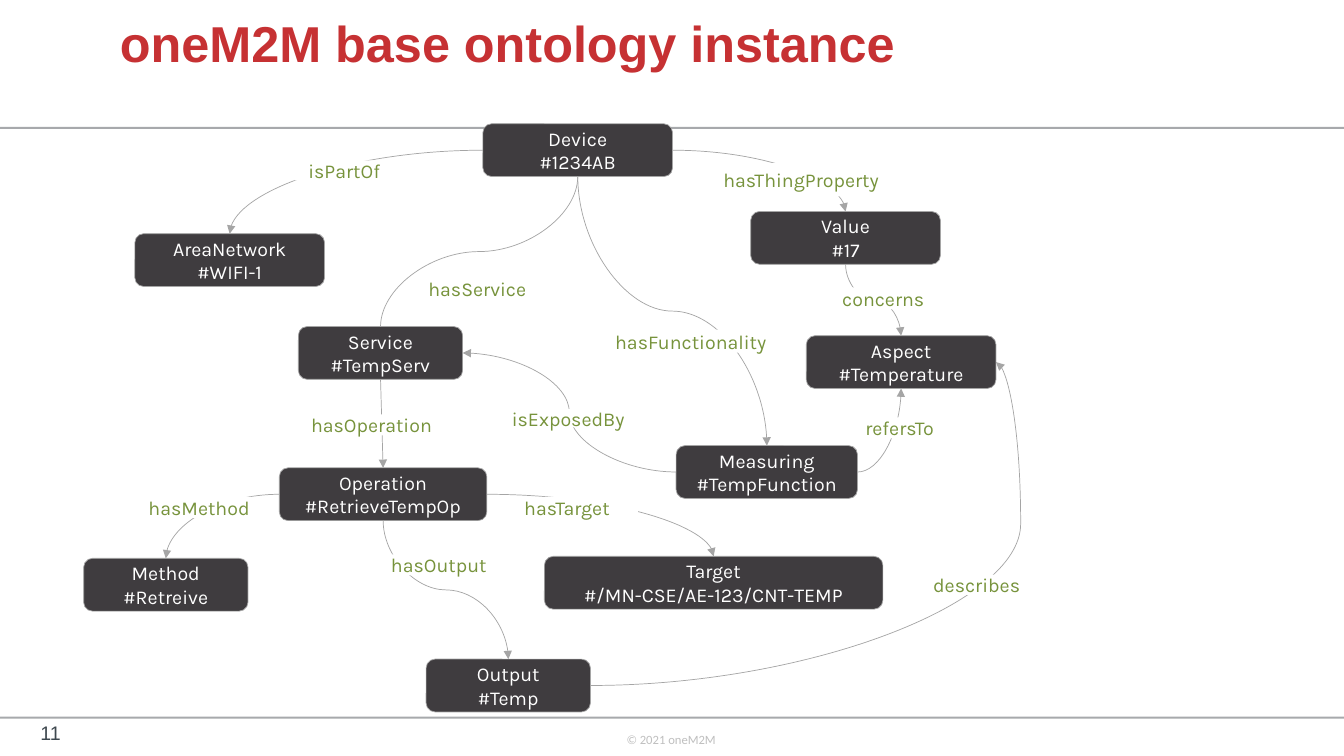
from dataclasses import dataclass

from lxml.etree import SubElement
from pptx import Presentation
from pptx.dml.color import RGBColor
from pptx.enum.shapes import MSO_CONNECTOR, MSO_SHAPE
from pptx.enum.text import MSO_ANCHOR, PP_ALIGN
from pptx.oxml.ns import qn
from pptx.shapes.autoshape import Shape
from pptx.shapes.connector import Connector
from pptx.slide import Slide
from pptx.util import Cm, Pt

COLORS = {
    "rule": "A7A9AC", "title": "C63133", "number": "3E484F", "footer": "BFBFBF",
    "node": "3F3C3F", "line": "A5A5A5", "node_text": "FFFFFF",
    "label": "77933C", "label_fill": "FFFFFF",
}
NODE_HEIGHT = 1.33
TOP, LEFT, BOTTOM, RIGHT = range(4)


@dataclass
class Node:
    name: str
    ident: str
    x: float
    y: float
    w: float


@dataclass
class Relation:
    label: str
    box: tuple[float, float, float, float]
    source: str
    source_side: int
    target: str
    target_side: int
    straight: bool = False
    arrow: bool = True
    align: PP_ALIGN = PP_ALIGN.CENTER
    bend: int | None = None


NODES = [
    Node("Service", "#TempServ", 7.52, 8.23, 4.14),
    Node("Measuring", "#TempFunction", 17.04, 11.23, 4.57),
    Node("Operation", "#RetrieveTempOp", 7.04, 11.79, 5.23),
    Node("Output", "#Temp", 10.74, 16.61, 4.14),
    Node("Target", "#/MN-CSE/AE-123/CNT-TEMP", 13.72, 14.02, 8.53),
    Node("Value", "#17", 18.92, 5.33, 4.78),
    Node("Aspect", "#Temperature", 20.32, 8.46, 4.78),
    Node("Method", "#Retreive", 2.11, 14.07, 4.14),
    Node("AreaNetwork", "#WIFI-1", 3.4, 5.89, 4.78),
    Node("Device", "#1234AB", 12.17, 3.12, 4.78),
]
RELATIONS = [
    Relation("hasService", (10.34, 7.04, 3.38, 0.48), "Device", BOTTOM, "Service", TOP, arrow=False),
    Relation("hasFunctionality", (14.96, 8.31, 4.9, 0.58), "Device", BOTTOM, "Measuring", TOP),
    Relation("hasOperation", (7.59, 10.44, 3.94, 0.53), "Service", BOTTOM, "Operation", TOP,
             straight=True, align=PP_ALIGN.LEFT),
    Relation("hasMethod", (3.23, 12.52, 3.58, 0.53), "Operation", LEFT, "Method", TOP),
    Relation("hasOutput", (9.27, 13.97, 3.58, 0.53), "Operation", BOTTOM, "Output", TOP),
    Relation("hasTarget", (12.5, 12.52, 3.58, 0.53), "Operation", RIGHT, "Target", TOP),
    Relation("isExposedBy", (12.65, 10.31, 3.81, 0.46), "Measuring", LEFT, "Service", RIGHT,
             align=PP_ALIGN.LEFT),
    Relation("concerns", (20.47, 7.24, 3.58, 0.56), "Value", BOTTOM, "Aspect", TOP),
    Relation("hasThingProperty", (17.7, 4.11, 4.98, 0.84), "Device", RIGHT, "Value", TOP),
    Relation("refersTo", (21.29, 10.52, 2.77, 0.53), "Measuring", RIGHT, "Aspect", BOTTOM),
    Relation("isPartOf", (7.42, 4.04, 2.51, 0.51), "Device", LEFT, "AreaNetwork", TOP),
    Relation("describes", (23.09, 14.48, 3.05, 0.51), "Output", RIGHT, "Aspect", RIGHT, bend=106100),
]


def rgb(name: str) -> RGBColor:
    return RGBColor.from_string(COLORS[name])


def write(sp: Shape, text: str, size: float, font: str, color: str,
          align: PP_ALIGN = PP_ALIGN.LEFT, bold: bool = False) -> None:
    tf = sp.text_frame
    tf.text = text
    for p in tf.paragraphs:
        p.alignment = align
        for r in p.runs:
            r.font.size, r.font.name, r.font.bold = Pt(size), font, bold
            r.font.color.rgb = rgb(color)


def add_box(s: Slide, kind: MSO_SHAPE, box: tuple[float, float, float, float], fill: str) -> Shape:
    sp = s.shapes.add_shape(kind, *map(Cm, box))
    sp.shadow.inherit = False
    sp.fill.solid()
    sp.fill.fore_color.rgb = rgb(fill)
    sp.line.fill.background()
    sp.text_frame.vertical_anchor = MSO_ANCHOR.MIDDLE
    return sp


def add_text(s: Slide, box: tuple[float, float, float, float], wrap: bool = True) -> Shape:
    sp = s.shapes.add_textbox(*map(Cm, box))
    sp.text_frame.word_wrap = wrap
    return sp


def add_node(s: Slide, node: Node) -> Shape:
    sp = add_box(s, MSO_SHAPE.ROUNDED_RECTANGLE, (node.x, node.y, node.w, NODE_HEIGHT), "node")
    sp.line.color.rgb = rgb("line")
    sp.line.width = Pt(0.5)
    write(sp, f"{node.name}\n{node.ident}", 14, "Karla", "node_text", PP_ALIGN.CENTER)
    return sp


def turn_upright(c: Connector) -> None:
    """Rotate a curve by a quarter so that it leaves its source downwards."""
    to_right = c.end_x > c.begin_x
    w, h = c.width, c.height
    c.left, c.top = c.left + (w - h) // 2, c.top + (h - w) // 2
    c.width, c.height = h, w
    xfrm = c._element.spPr.find(qn("a:xfrm"))
    xfrm.set("rot", str((270 if to_right else 90) * 60000))
    xfrm.set("flipH", "1" if to_right else "0")


def add_relation(s: Slide, rel: Relation, shapes: dict[str, Shape]) -> None:
    kind = MSO_CONNECTOR.STRAIGHT if rel.straight else MSO_CONNECTOR.CURVE
    c = s.shapes.add_connector(kind, 0, 0, 0, 0)
    c.begin_connect(shapes[rel.source], rel.source_side)
    c.end_connect(shapes[rel.target], rel.target_side)
    c.line.color.rgb = rgb("line")
    c.line.width = Pt(0.5)
    pr = c._element.spPr
    SubElement(pr, qn("a:effectLst"))
    if rel.arrow:
        SubElement(pr.find(qn("a:ln")), qn("a:tailEnd"), type="triangle")
    if rel.straight:
        return
    geom = pr.find(qn("a:prstGeom"))
    if rel.source_side == BOTTOM:
        turn_upright(c)
    elif rel.target_side in (TOP, BOTTOM):
        geom.set("prst", "curvedConnector2")
    if rel.bend is not None:
        SubElement(geom.find(qn("a:avLst")), qn("a:gd"), name="adj1", fmla=f"val {rel.bend}")


def add_label(s: Slide, rel: Relation) -> None:
    sp = add_box(s, MSO_SHAPE.RECTANGLE, rel.box, "label_fill")
    write(sp, rel.label, 14, "Karla", "label", rel.align)


def main() -> None:
    prs = Presentation()
    prs.slide_width, prs.slide_height = Cm(33.87), Cm(19.05)
    s = prs.slides.add_slide(prs.slide_layouts[6])

    for y in (3.2, 18.06):
        add_box(s, MSO_SHAPE.RECTANGLE, (0, y, 33.87, 0.05), "rule")
    footer = add_text(s, (15.54, 18.31, 2.79, 1.02), wrap=False)
    write(footer, "© 2021 oneM2M", 9, "Calibri", "footer")
    number = add_text(s, (0.03, 17.96, 1.75, 1.02))
    number.text_frame.vertical_anchor = MSO_ANCHOR.MIDDLE
    number.text_frame.margin_left = 0
    write(number, "11", 14, "Arial", "number", PP_ALIGN.RIGHT)
    title = add_text(s, (2.77, 0.36, 22.71, 2.11))
    write(title, "oneM2M base ontology instance", 36, "Arial", "title", bold=True)
    title.text_frame.paragraphs[0].line_spacing = 0.9

    shapes = {node.name: add_node(s, node) for node in NODES}
    for rel in RELATIONS:
        add_relation(s, rel, shapes)
    for rel in RELATIONS:
        add_label(s, rel)
    prs.save("out.pptx")


if __name__ == "__main__":
    main()
